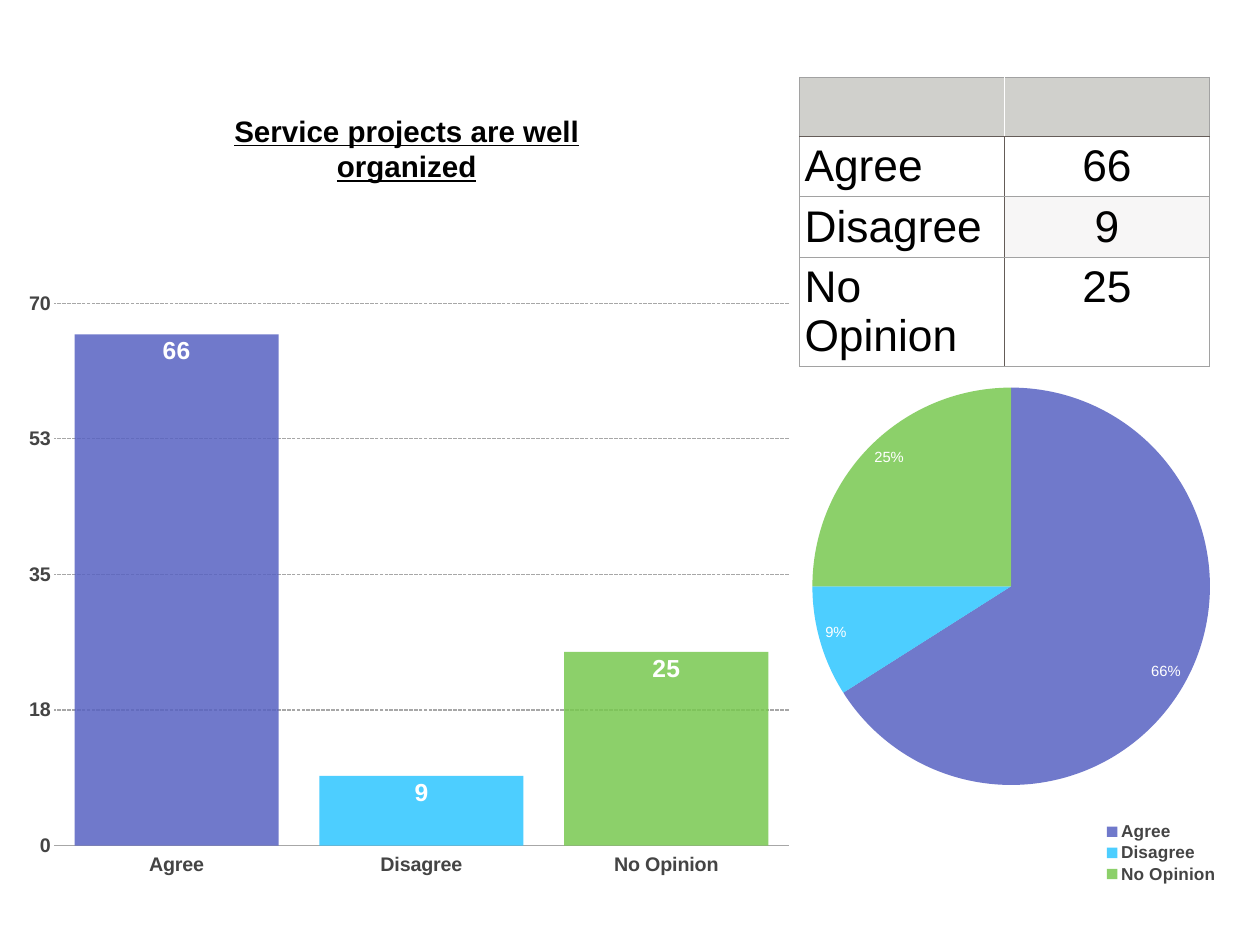
"""Build the survey slide with its table, column chart and pie chart."""
from dataclasses import dataclass
from typing import Any

from lxml import etree
from pptx import Presentation
from pptx import util as u
from pptx.chart import data
from pptx.dml.color import RGBColor
from pptx.enum import chart as kinds
from pptx.enum import dml, text
from pptx.oxml import ns

SCALE = 9144
FONT = "Arial"
BLACK = RGBColor(0x00, 0x00, 0x00)
WHITE = RGBColor(0xFF, 0xFF, 0xFF)
LABEL_GREY = RGBColor(0x44, 0x44, 0x44)
AXIS_GREY = RGBColor(0xA7, 0xA7, 0xA7)
RULE_GREY = RGBColor(0xA2, 0xA2, 0xA2)
RULE_BROWN = RGBColor(0x64, 0x5C, 0x58)
HEADER_GREY = RGBColor(0xD0, 0xD0, 0xCC)
BAND_GREY = RGBColor(0xC0, 0xBD, 0xB5)
INDIGO = RGBColor(0x58, 0x62, 0xC2)
SKY = RGBColor(0x2E, 0xC6, 0xFF)
GREEN = RGBColor(0x79, 0xC8, 0x50)


@dataclass(frozen=True)
class Answer:
    name: str
    percent: int
    colour: RGBColor


@dataclass(frozen=True)
class Frame:
    left: int
    top: int
    width: int
    height: int

    def emu(self) -> tuple[int, ...]:
        return tuple(px(n) for n in (self.left, self.top, self.width, self.height))


@dataclass(frozen=True)
class Rule:
    colour: RGBColor
    points: float


@dataclass(frozen=True)
class Region:
    x: float
    y: float
    w: float
    h: float


ANSWERS = (
    Answer("Agree", 66, INDIGO),
    Answer("Disagree", 9, SKY),
    Answer("No Opinion", 25, GREEN),
)
OUTER = Rule(RULE_GREY, 0.25)
INNER = Rule(RULE_BROWN, 0.5)
HEADER_SPLIT = Rule(WHITE, 1)
TITLE_FRAME = Frame(214, 122, 490, 91)
TABLE_FRAME = Frame(902, 87, 463, 326)
COLUMN_FRAME = Frame(17, 315, 882, 688)
PIE_FRAME = Frame(908, 432, 491, 568)
ROW_HEIGHTS = (67, 68, 68, 123)
INSET = 6


def px(length: int) -> u.Emu:
    return u.Emu(length * SCALE)


def style(font: Any, *, size: int, colour: RGBColor, bold: bool = False,
          underline: bool = False) -> None:
    font.name = FONT
    font.size = u.Pt(size)
    font.bold = bold
    font.underline = underline
    font.color.rgb = colour


def write(frame: Any, words: str, *, align: Any = text.PP_ALIGN.LEFT, **looks: Any) -> None:
    para = frame.paragraphs[0]
    para.alignment = align
    span = para.add_run()
    span.text = words
    style(span.font, **looks)


def fade(root: Any, percent: int) -> None:
    for colour in root.iter(ns.qn("a:srgbClr")):
        etree.SubElement(colour, ns.qn("a:alpha"), val=str(percent * 1000))


def draw_border(cell: Any, tag: str, rule: Rule) -> None:
    line = etree.SubElement(cell._tc.get_or_add_tcPr(), ns.qn(f"a:{tag}"),
                            w=str(u.Pt(rule.points)))
    fill = etree.SubElement(line, ns.qn("a:solidFill"))
    etree.SubElement(fill, ns.qn("a:srgbClr"), val=str(rule.colour))


def draw_cell(table: Any, row: int, column: int) -> None:
    cell = table.cell(row, column)
    cell.margin_left = cell.margin_right = px(INSET)
    cell.margin_top = cell.margin_bottom = px(INSET)
    middle = INNER if row else HEADER_SPLIT
    if row == 0:
        cell.fill.solid()
        cell.fill.fore_color.rgb = HEADER_GREY
    elif (row, column) == (2, 1):
        cell.fill.solid()
        cell.fill.fore_color.rgb = BAND_GREY
        fade(cell._tc, 12)
    else:
        cell.fill.background()
    props = cell._tc.get_or_add_tcPr()
    fill = props[0]
    draw_border(cell, "lnL", middle if column else OUTER)
    draw_border(cell, "lnR", OUTER if column else middle)
    draw_border(cell, "lnT", INNER if row == 1 else OUTER)
    draw_border(cell, "lnB", INNER if row == 0 else OUTER)
    props.append(fill)
    if row:
        answer = ANSWERS[row - 1]
        words = str(answer.percent) if column else answer.name
        align = text.PP_ALIGN.CENTER if column else text.PP_ALIGN.LEFT
        write(cell.text_frame, words, align=align, size=36, colour=BLACK)


def draw_table(page: Any) -> None:
    table = page.shapes.add_table(len(ROW_HEIGHTS), 2, *TABLE_FRAME.emu()).table
    table.first_row = table.horz_banding = False
    for row, height in enumerate(ROW_HEIGHTS):
        table.rows[row].height = px(height)
        for column in range(2):
            draw_cell(table, row, column)


def place(parent: Any, index: int, region: Region, *, inner: bool = False) -> None:
    for old in parent.findall(ns.qn("c:layout")):
        parent.remove(old)
    layout = etree.Element(ns.qn("c:layout"))
    manual = etree.SubElement(layout, ns.qn("c:manualLayout"))
    settings = [("layoutTarget", "inner")] if inner else []
    settings += [("xMode", "edge"), ("yMode", "edge")]
    settings += [(side, str(getattr(region, side))) for side in "xywh"]
    for tag, value in settings:
        etree.SubElement(manual, ns.qn(f"c:{tag}"), val=value)
    parent.insert(index, layout)


def draw_chart(page: Any, kind: Any, frame: Frame, region: Region, *, size: int,
               bold: bool, percent: bool) -> Any:
    figures = data.CategoryChartData(number_format="#,##0")
    figures.categories = [answer.name for answer in ANSWERS]
    figures.add_series("Series 1", [answer.percent for answer in ANSWERS])
    chart = page.shapes.add_chart(kind, *frame.emu(), figures).chart
    chart.has_title = chart.has_legend = False
    plot = chart.plots[0]
    plot.vary_by_categories = percent
    for index, answer in enumerate(ANSWERS):
        fill = plot.series[0].points[index].format.fill
        fill.solid()
        fill.fore_color.rgb = answer.colour
    fade(chart._chartSpace, 85)
    style(chart.font, size=10, colour=BLACK)
    plot.has_data_labels = True
    labels = plot.data_labels
    style(labels.font, size=size, colour=WHITE, bold=bold)
    labels.number_format = "0%" if percent else "#,##0"
    labels.number_format_is_linked = False
    labels.show_value, labels.show_percentage = not percent, percent
    labels.position = kinds.XL_LABEL_POSITION.INSIDE_END
    place(chart._chartSpace.chart.plotArea, 0, region, inner=True)
    return chart


def draw_columns(page: Any) -> None:
    chart = draw_chart(page, kinds.XL_CHART_TYPE.COLUMN_CLUSTERED, COLUMN_FRAME,
                       Region(0.05, 0.04, 0.94, 0.89), size=20, bold=True, percent=False)
    chart.plots[0].gap_width, chart.plots[0].overlap = 20, -40
    names, values = chart.category_axis, chart.value_axis
    for axis in (names, values):
        axis.major_tick_mark = axis.minor_tick_mark = kinds.XL_TICK_MARK.NONE
        style(axis.tick_labels.font, size=16, colour=LABEL_GREY, bold=True)
        axis.tick_labels.number_format = "#,##0"
        axis.tick_labels.number_format_is_linked = False
    names.tick_label_position = kinds.XL_TICK_LABEL_POSITION.LOW
    values.minimum_scale, values.maximum_scale, values.major_unit = 0, 70, 17.5
    values.format.line.fill.background()
    for line in (names.format.line, values.major_gridlines.format.line):
        line.width = u.Pt(1)
        line.color.rgb = AXIS_GREY
    values.major_gridlines.format.line.dash_style = dml.MSO_LINE.SQUARE_DOT


def draw_pie(page: Any) -> None:
    chart = draw_chart(page, kinds.XL_CHART_TYPE.PIE, PIE_FRAME,
                       Region(0.01, 0.01, 0.93, 0.79), size=12, bold=False, percent=True)
    chart.has_legend = True
    legend = chart.legend
    legend.position = kinds.XL_LEGEND_POSITION.BOTTOM
    legend.include_in_layout = True
    style(legend.font, size=14, colour=LABEL_GREY, bold=True)
    place(legend._element, 1, Region(0.68, 0.87, 0.28, 0.13))


def draw_title(page: Any) -> None:
    box = page.shapes.title
    box.left, box.top, box.width, box.height = TITLE_FRAME.emu()
    frame = box.text_frame
    frame.word_wrap = True
    frame.auto_size = text.MSO_AUTO_SIZE.NONE
    frame.vertical_anchor = text.MSO_ANCHOR.MIDDLE
    frame.margin_left = frame.margin_right = px(INSET)
    frame.margin_top = frame.margin_bottom = px(INSET)
    write(frame, "Service projects are well organized", align=text.PP_ALIGN.CENTER,
          size=24, colour=BLACK, bold=True, underline=True)


def main() -> None:
    deck = Presentation()
    deck.slide_width, deck.slide_height = px(1422), px(1067)
    page = deck.slides.add_slide(deck.slide_layouts[5])
    draw_title(page)
    draw_table(page)
    draw_columns(page)
    draw_pie(page)
    deck.save("out.pptx")


if __name__ == "__main__":
    main()
